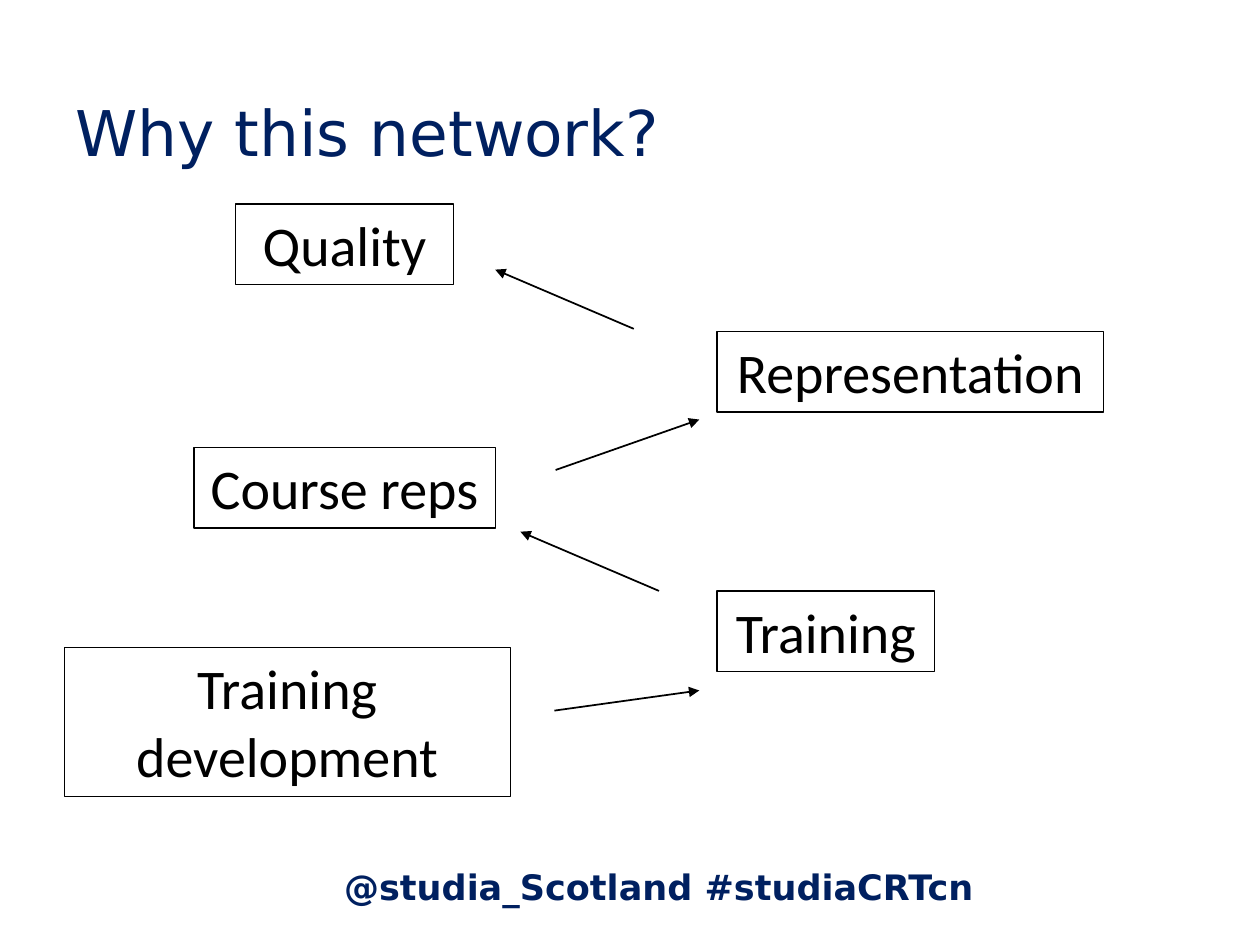
"""Build the slide that links training to quality in five steps."""
from typing import Any, NamedTuple

from lxml.etree import SubElement
from pptx import Presentation
from pptx.dml.color import RGBColor
from pptx.enum.shapes import MSO_CONNECTOR, MSO_SHAPE
from pptx.enum.text import MSO_ANCHOR, MSO_AUTO_SIZE, PP_ALIGN
from pptx.oxml.ns import qn
from pptx.util import Inches, Pt

NAVY, BLACK = "002060", "000000"


class Box(NamedTuple):
    text: str
    left: float
    top: float
    width: float
    height: float = 0.64


class Arrow(NamedTuple):
    x1: float
    y1: float
    x2: float
    y2: float


STEPS = [
    Box("Quality", 1.87, 1.62, 1.73),
    Box("Representation", 5.69, 2.63, 3.07),
    Box("Course reps", 1.54, 3.55, 2.39),
    Box("Training", 5.69, 4.69, 1.73),
    Box("Training development", 0.51, 5.14, 3.54, 1.18),
]
ARROWS = [
    Arrow(5.03, 2.61, 3.93, 2.14),
    Arrow(4.41, 3.73, 5.55, 3.33),
    Arrow(5.23, 4.69, 4.13, 4.22),
    Arrow(4.4, 5.64, 5.55, 5.48),
]
TITLE = Box("Why this network?", 0.5, 0.3, 7.26, 1.48)
TAGS = Box("@studia_Scotland #studiaCRTcn", 2.24, 6.82, 5.98, 0.44)
STEP_FONT = {"name": "Calibri", "size": Pt(32), "bold": False}
TITLE_FONT = {"name": "DejaVu Sans", "size": Pt(36), "bold": False}
TAG_FONT = {"name": "DejaVu Sans", "size": Pt(20), "bold": True}


def paint(color: Any, code: str) -> None:
    color.rgb = RGBColor.from_string(code)


def write(shape: Any, text: str, font: dict, code: str,
          align: PP_ALIGN = PP_ALIGN.CENTER,
          anchor: MSO_ANCHOR = MSO_ANCHOR.TOP) -> None:
    frame = shape.text_frame
    frame.text = text
    form = {"word_wrap": True, "auto_size": MSO_AUTO_SIZE.NONE,
            "vertical_anchor": anchor}
    for name, value in form.items():
        setattr(frame, name, value)
    line = frame.paragraphs[0]
    line.alignment = align
    for name, value in font.items():
        setattr(line.runs[0].font, name, value)
    paint(line.runs[0].font.color, code)


def draw_step(slide: Any, box: Box) -> None:
    shape = slide.shapes.add_shape(MSO_SHAPE.RECTANGLE, *map(Inches, box[1:]))
    shape.shadow.inherit = False
    shape.fill.background()
    paint(shape.line.color, BLACK)
    shape.line.width = Pt(0.75)
    write(shape, box.text, STEP_FONT, BLACK)


def draw_arrow(slide: Any, arrow: Arrow) -> None:
    link = slide.shapes.add_connector(MSO_CONNECTOR.STRAIGHT, *map(Inches, arrow))
    paint(link.line.color, BLACK)
    link.line.width = Pt(1)
    SubElement(link.line._get_or_add_ln(), qn("a:tailEnd"), type="triangle")
    SubElement(link._element.spPr, qn("a:effectLst"))


def main() -> None:
    deck = Presentation()
    deck.slide_width, deck.slide_height = Inches(10), Inches(7.5)
    slide = deck.slides.add_slide(deck.slide_layouts[5])
    title = slide.shapes.title
    for name in ("left", "top", "width", "height"):
        setattr(title, name, Inches(getattr(TITLE, name)))
    write(title, TITLE.text, TITLE_FONT, NAVY, PP_ALIGN.LEFT, MSO_ANCHOR.MIDDLE)
    tags = slide.shapes.add_textbox(*map(Inches, TAGS[1:]))
    write(tags, TAGS.text, TAG_FONT, NAVY)
    for step in STEPS:
        draw_step(slide, step)
    for arrow in ARROWS:
        draw_arrow(slide, arrow)
    deck.save("out.pptx")


if __name__ == "__main__":
    main()
